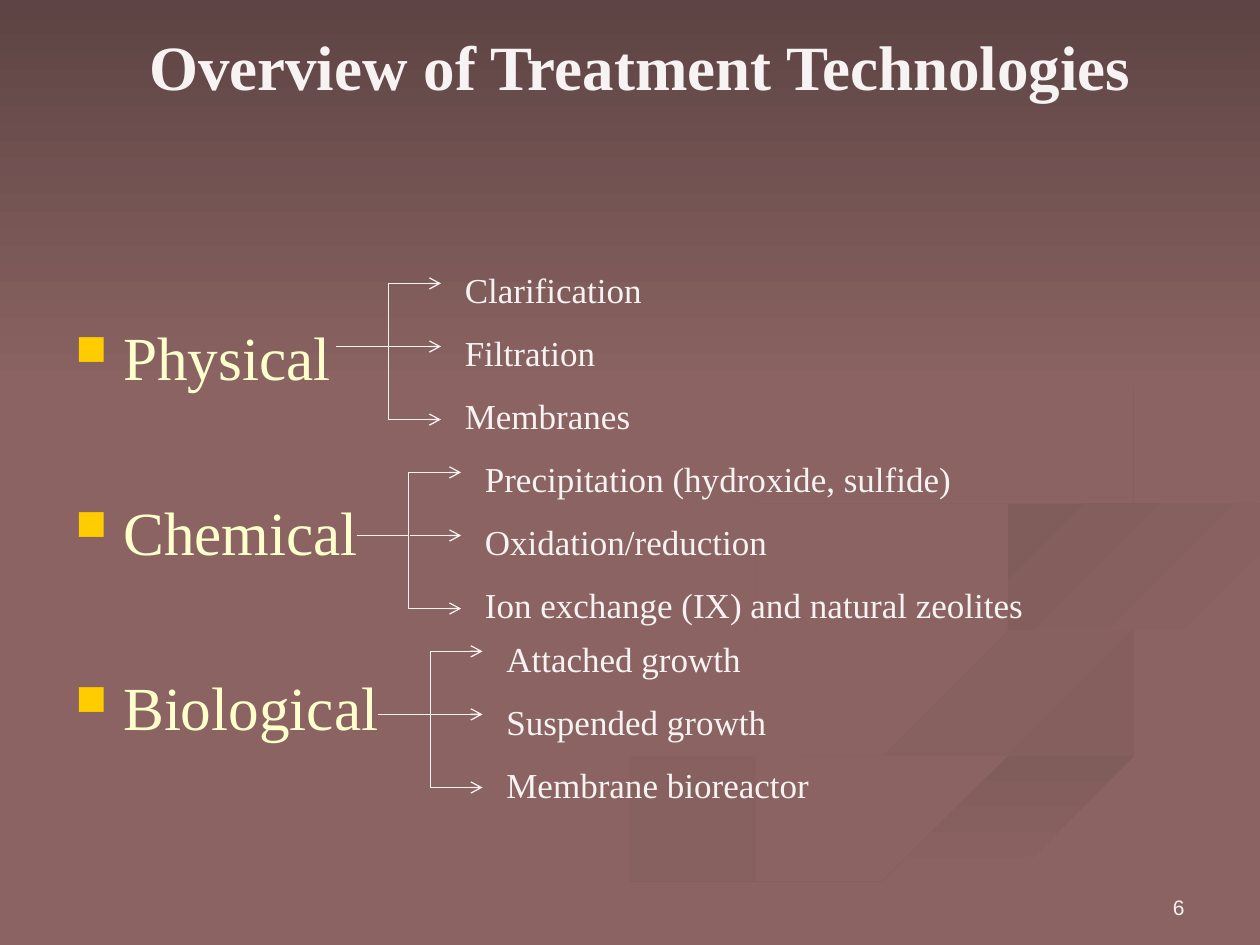
from dataclasses import dataclass

from lxml.etree import SubElement
from pptx import Presentation
from pptx.dml.color import RGBColor
from pptx.enum.shapes import MSO_CONNECTOR, MSO_SHAPE
from pptx.enum.text import MSO_ANCHOR, PP_ALIGN
from pptx.oxml.ns import qn
from pptx.util import Inches, Pt


@dataclass(frozen=True)
class Theme:
    background: str = "8A6362"
    ribbon: str = "805C5B"
    pale_ribbon: str = "845F5E"
    sky: str = "5E4444"
    light: str = "F7F3F3"
    category: str = "FFFFCC"
    bullet: str = "FFCC00"
    serif: str = "Times New Roman"
    sans: str = "Arial"
    title_size: int = 36
    category_size: int = 35
    item_size: int = 20
    number_size: int = 12
    line_width: float = 0.75


THEME = Theme()

# Each ribbon: start colour, end colour, clockwise angle, and its two edges.
RIBBONS = [
    (THEME.background, THEME.pale_ribbon, 0,
     [(5.75, 4.59), (5.72, 4.76), (6.31, 5.05), (7.41, 5.39), (7.86, 5.66), (7.39, 5.98),
      (5.39, 6.49), (4.17, 6.9), (3, 7.49)],
     [(3.61, 7.49), (4.99, 6.87), (6.51, 6.4), (7.69, 6.09), (8, 5.81), (7.67, 5.47),
      (6.42, 5.07), (5.83, 4.77), (5.75, 4.59)]),
    (THEME.background, THEME.pale_ribbon, 45,
     [(7.24, 4.64), (7.46, 5), (8.38, 5.36), (9, 5.57), (9.18, 5.81), (8.94, 6.05)],
     [(9.32, 5.89), (9.43, 5.7), (9.05, 5.4), (7.92, 5.09), (7.33, 4.83), (7.24, 4.64)]),
    (THEME.ribbon, THEME.background, 90,
     [(5.03, 7.49), (6.3, 6.93), (7.64, 6.47), (9.98, 5.81)],
     [(9.98, 6.09), (8.21, 6.51), (6.7, 7.02), (5.71, 7.49)]),
    (THEME.ribbon, THEME.background, 45,
     [(8.26, 4.96), (8.05, 4.72), (8.43, 4.48), (9.98, 4.2)],
     [(9.98, 4.02), (8.65, 4.24), (7.91, 4.47), (7.82, 4.69), (8.26, 4.96)]),
    (THEME.ribbon, THEME.background, 45,
     [(7.62, 2.33), (8.55, 2.85), (8.89, 3.35), (8.42, 3.78), (6.49, 4.2), (5.84, 4.46),
      (5.84, 4.79), (6.22, 5)],
     [(5.93, 4.7), (6.24, 4.44), (7.86, 4.12), (8.67, 3.84), (8.94, 3.44), (8.54, 2.83),
      (7.62, 2.33)]),
]

# Each category: name, trunk left, trunk height, first item top, items with widths.
CATEGORIES = [
    ("Physical", 2.67, 2.75, 2.08, [
        ("Clarification", 3.08), ("Filtration", 3.08), ("Membranes", 3.08)]),
    ("Chemical", 2.83, 4.25, 3.58, [
        ("Precipitation (hydroxide, sulfide)", 4), ("Oxidation/reduction", 3.08),
        ("Ion exchange (IX) and natural zeolites", 4.58)]),
    ("Biological", 3, 5.67, 5.01, [
        ("Attached growth", 3.08), ("Suspended growth", 3.08), ("Membrane bioreactor", 3.08)]),
]


def color(value):
    return RGBColor.from_string(value)


def smooth_edge(points, steps=5):
    """Return points along a Catmull-Rom curve through the given points."""
    padded = [points[0], *points, points[-1]]
    curve = [points[0]]
    for before, start, end, after in zip(padded, padded[1:], padded[2:], padded[3:]):
        for step in range(1, steps + 1):
            t = step / steps
            curve.append(tuple(
                b + ((c - a) * t + (2 * a - 5 * b + 4 * c - d) * t ** 2
                     + (3 * b - a - 3 * c + d) * t ** 3) / 2
                for a, b, c, d in zip(before, start, end, after)))
    return curve


def fill_gradient(shape, start, end, angle):
    """Fill without outline; angle is clockwise in degrees."""
    shape.shadow.inherit = False
    shape.line.fill.background()
    shape.fill.gradient()
    shape.fill.gradient_angle = (360 - angle) % 360
    for stop, value in zip(shape.fill.gradient_stops, (start, end)):
        stop.color.rgb = color(value)


def add_ribbon(slide, start, end, angle, near_edge, far_edge):
    points = smooth_edge(near_edge) + smooth_edge(far_edge)
    builder = slide.shapes.build_freeform(*points[0], scale=Inches(1))
    builder.add_line_segments(points[1:], close=True)
    fill_gradient(builder.convert_to_shape(), start, end, angle)


def add_backdrop(slide):
    slide.background.fill.solid()
    slide.background.fill.fore_color.rgb = color(THEME.background)
    for ribbon in RIBBONS:
        add_ribbon(slide, *ribbon)
    sky = slide.shapes.add_shape(MSO_SHAPE.RECTANGLE, 0, 0, Inches(10), Inches(3.08))
    fill_gradient(sky, THEME.sky, THEME.background, 90)


def add_text(slide, text, box, size, font=THEME.serif, ink=THEME.light, bold=False,
             align=PP_ALIGN.LEFT, anchor=MSO_ANCHOR.TOP):
    shape = slide.shapes.add_textbox(*map(Inches, box))
    text_frame = shape.text_frame
    text_frame.word_wrap = True
    text_frame.vertical_anchor = anchor
    text_frame.text = text
    for paragraph in text_frame.paragraphs:
        paragraph.alignment = align
        for run in paragraph.runs:
            run.font.name = font
            run.font.size = Pt(size)
            run.font.bold = bold
            run.font.color.rgb = color(ink)
    return text_frame


def add_bullet(paragraph):
    properties = paragraph._p.get_or_add_pPr()
    properties.set("marL", str(Inches(0.38)))
    properties.set("indent", str(-Inches(0.38)))
    bullet_color = SubElement(properties, qn("a:buClr"))
    SubElement(bullet_color, qn("a:srgbClr"), val=THEME.bullet)
    SubElement(properties, qn("a:buSzPct"), val="70000")
    SubElement(properties, qn("a:buChar"), char="■")


def add_category_list(slide):
    names = "\n".join(category[0] for category in CATEGORIES)
    text_frame = add_text(slide, names, (0.5, 1.75, 9, 4.95), THEME.category_size,
                          ink=THEME.category)
    text_frame.margin_top = Inches(0.78)
    for paragraph in text_frame.paragraphs:
        paragraph.space_after = Pt(58)
        add_bullet(paragraph)


def add_arrow(slide, kind, begin, end):
    connector = slide.shapes.add_connector(kind, *map(Inches, begin + end))
    connector.line.color.rgb = color(THEME.light)
    connector.line.width = Pt(THEME.line_width)
    SubElement(connector.line._get_or_add_ln(), qn("a:tailEnd"), type="arrow")
    SubElement(connector._element.spPr, qn("a:effectLst"))


def add_branches(slide, left, middle, first_top, items):
    """Fork one trunk into three arrows, each pointing at an item."""
    tip = left + 0.83
    add_arrow(slide, MSO_CONNECTOR.ELBOW, (left, middle), (tip, middle - 0.5))
    add_arrow(slide, MSO_CONNECTOR.STRAIGHT, (left + 0.42, middle), (tip, middle))
    add_arrow(slide, MSO_CONNECTOR.ELBOW, (left, middle), (tip, middle + 0.58))
    for row, (text, width) in enumerate(items):
        box = (left + 0.92, first_top + 0.5 * row, width, 0.44)
        add_text(slide, text, box, THEME.item_size)


def main():
    presentation = Presentation()
    presentation.slide_width, presentation.slide_height = Inches(10), Inches(7.5)
    slide = presentation.slides.add_slide(presentation.slide_layouts[6])
    add_backdrop(slide)
    add_text(slide, "Overview of Treatment Technologies", (0.33, 0.17, 9.5, 1.25),
             THEME.title_size, bold=True, align=PP_ALIGN.CENTER)
    add_category_list(slide)
    add_text(slide, "6", (7.17, 6.83, 2.33, 0.52), THEME.number_size, font=THEME.sans,
             align=PP_ALIGN.RIGHT, anchor=MSO_ANCHOR.BOTTOM)
    for _, *branch in CATEGORIES:
        add_branches(slide, *branch)
    presentation.save("out.pptx")


if __name__ == "__main__":
    main()
